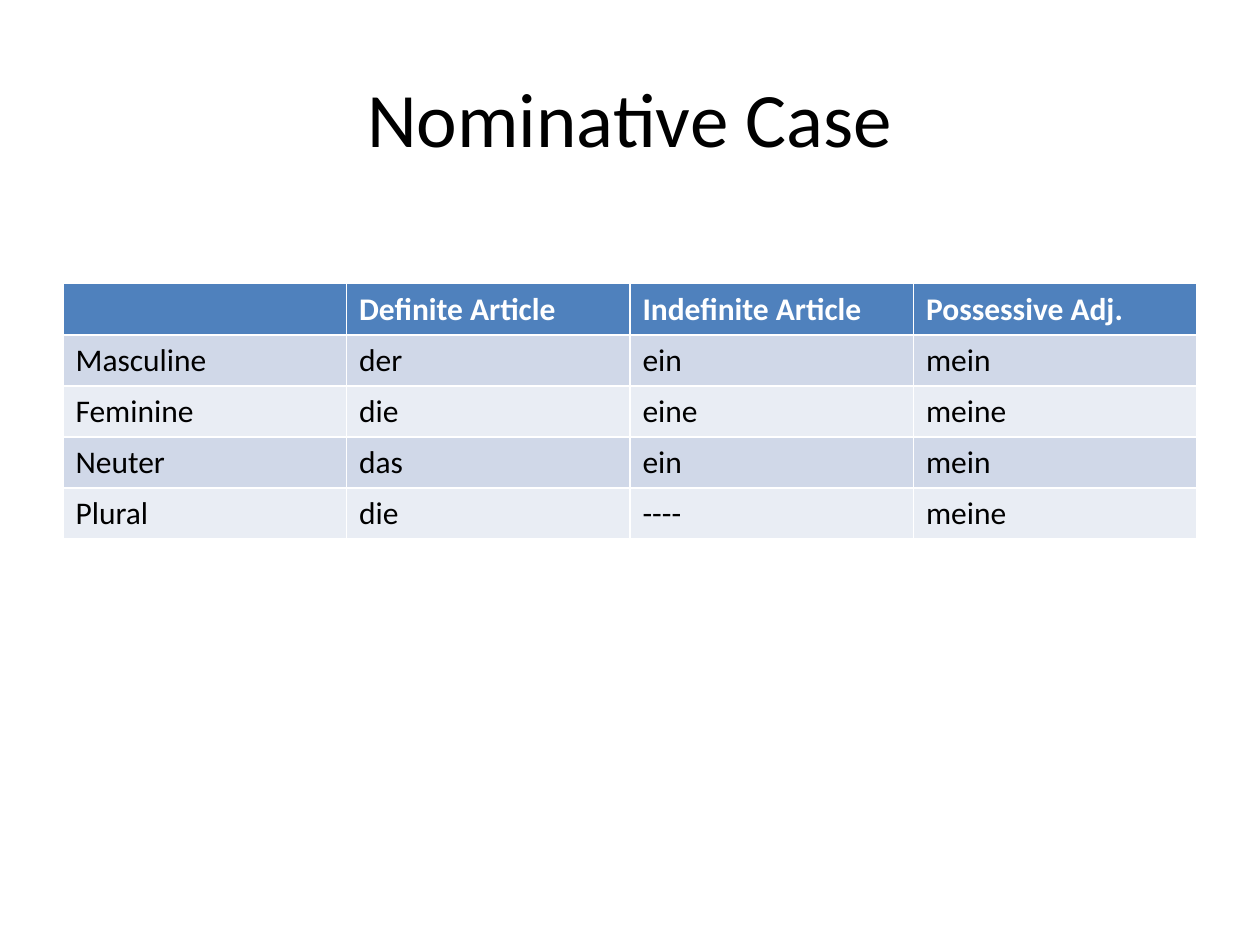
from pptx import Presentation
from pptx.dml.color import RGBColor
from pptx.enum.text import MSO_ANCHOR, PP_ALIGN
from pptx.util import Cm, Pt

COLORS = {
    "header": "4F81BD",
    "odd_row": "D0D8E8",
    "even_row": "E9EDF4",
    "header_text": "FFFFFF",
    "text": "000000",
}
FONT = "Calibri"

CASE_ROWS = [
    ("", "Definite Article", "Indefinite Article", "Possessive Adj."),
    ("Masculine", "der", "ein", "mein"),
    ("Feminine", "die", "eine", "meine"),
    ("Neuter", "das", "ein", "mein"),
    ("Plural", "die", "----", "meine"),
]


def style_font(paragraph, size, color, bold=False):
    font = paragraph.font
    font.name = FONT
    font.size = Pt(size)
    font.bold = bold
    font.color.rgb = RGBColor.from_string(COLORS[color])


presentation = Presentation()
presentation.slide_width = Cm(25.4)
presentation.slide_height = Cm(19.05)
slide = presentation.slides.add_slide(presentation.slide_layouts[5])

# Title
heading = slide.shapes.title
heading.left, heading.top = Cm(1.27), Cm(0.76)
heading.width, heading.height = Cm(22.86), Cm(3.18)
heading.text_frame.text = "Nominative Case"
heading.text_frame.vertical_anchor = MSO_ANCHOR.MIDDLE
heading_line = heading.text_frame.paragraphs[0]
heading_line.alignment = PP_ALIGN.CENTER
style_font(heading_line, 44, "text")

# Article table; its built-in style supplies the white rules
articles = slide.shapes.add_table(
    len(CASE_ROWS), len(CASE_ROWS[0]), Cm(1.27), Cm(5.72), Cm(22.86), Cm(5.15)
).table

for row_index, words in enumerate(CASE_ROWS):
    is_header = row_index == 0
    if is_header:
        fill_color = "header"
    else:
        fill_color = "odd_row" if row_index % 2 else "even_row"
    for column_index, word in enumerate(words):
        cell = articles.cell(row_index, column_index)
        cell.fill.solid()
        cell.fill.fore_color.rgb = RGBColor.from_string(COLORS[fill_color])
        cell.text = word
        style_font(
            cell.text_frame.paragraphs[0],
            18,
            "header_text" if is_header else "text",
            bold=is_header,
        )

presentation.save("out.pptx")
